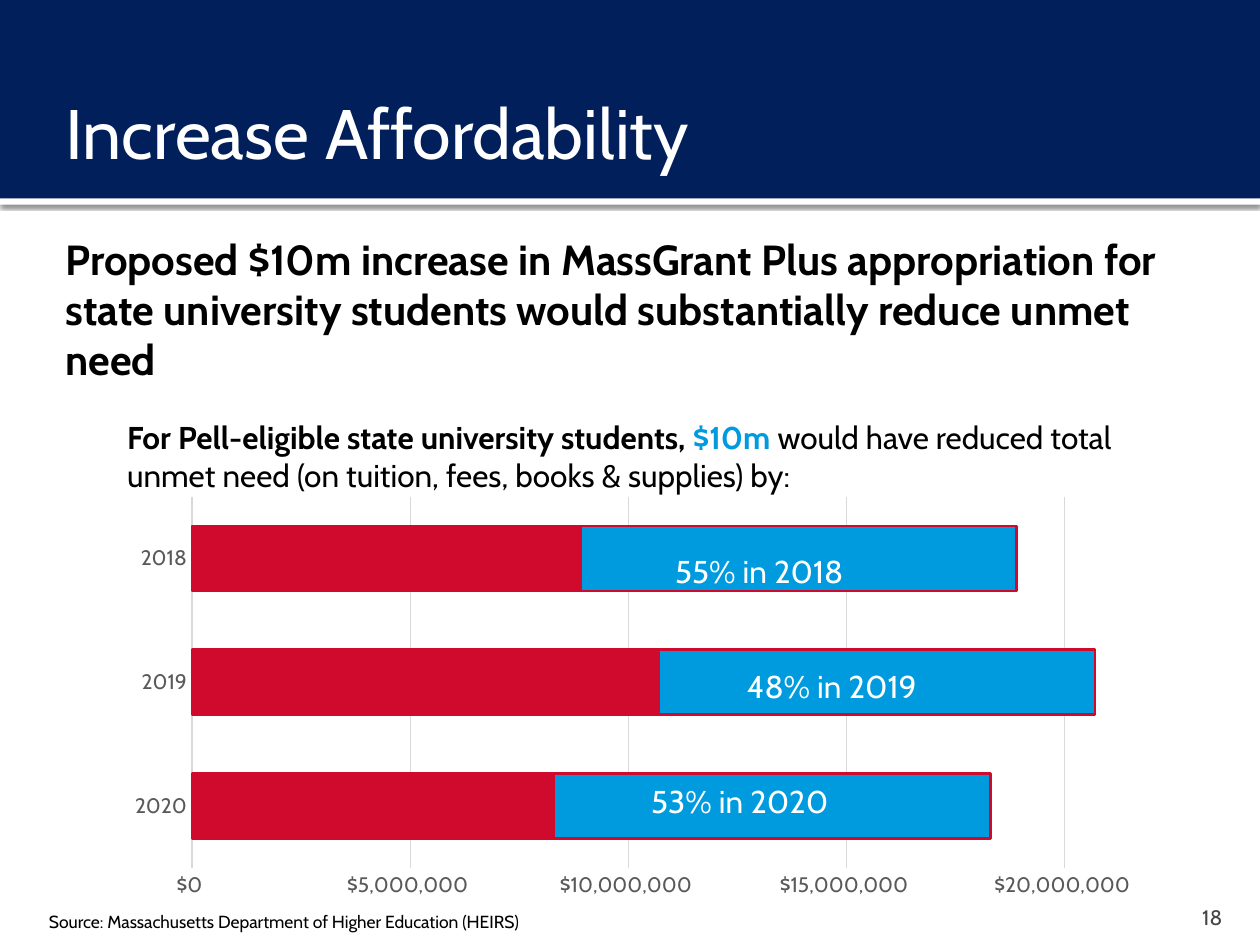
from lxml.etree import SubElement
from pptx import Presentation
from pptx.chart.data import CategoryChartData
from pptx.dml.color import RGBColor
from pptx.enum.chart import XL_CHART_TYPE, XL_TICK_MARK
from pptx.enum.shapes import MSO_SHAPE
from pptx.enum.text import MSO_ANCHOR, PP_ALIGN
from pptx.oxml import parse_xml
from pptx.oxml.ns import nsdecls, qn
from pptx.util import Inches, Pt

FONT = "Cabin"
NAVY, RED, BLUE = "001F5B", "CF0A2C", "009BDE"
WHITE, BLACK, GRAY, DARK_GRAY, GRID = "FFFFFF", "000000", "595959", "454545", "D9D9D9"
WIDTH, HEIGHT = 10, 7.5
BAND_HEIGHT = 0.21 * HEIGHT


def color(value):
    return RGBColor.from_string(value)


def set_font(font, size, value, bold=False):
    font.name = FONT
    font.size = Pt(size)
    font.bold = bold
    font.color.rgb = color(value)


def set_line(line, value, width):
    line.color.rgb = color(value)
    line.width = Pt(width)


def set_insets(frame, left, top, right, bottom):
    frame.margin_left, frame.margin_top = Inches(left), Inches(top)
    frame.margin_right, frame.margin_bottom = Inches(right), Inches(bottom)


def add_rectangle(slide, box, fill):
    shape = slide.shapes.add_shape(MSO_SHAPE.RECTANGLE, *map(Inches, box))
    shape.shadow.inherit = False
    shape.fill.solid()
    shape.fill.fore_color.rgb = color(fill)
    shape.line.fill.background()
    return shape


def add_text(slide, box, text, size, value, bold=False, indent=0):
    frame = slide.shapes.add_textbox(*map(Inches, box)).text_frame
    frame.word_wrap = True
    paragraph = frame.paragraphs[0]
    paragraph.text = text
    set_font(paragraph.font, size, value, bold)
    indent_paragraph(paragraph, indent)
    return frame


def indent_paragraph(paragraph, indent):
    properties = paragraph._p.get_or_add_pPr()
    properties.set("marL", str(Inches(indent)))
    properties.set("indent", "0")


def add_header(slide, box):
    left, top, width, height = box
    rule = add_rectangle(slide, (left, top + height, width, 0.05), WHITE)
    effects = rule._element.spPr.find(qn("a:effectLst"))
    effects.append(parse_xml(
        f'<a:outerShdw {nsdecls("a")} blurRad="{Pt(2.5)}" dist="{Pt(0.8)}" dir="5400000" '
        'algn="ctr" rotWithShape="0"><a:srgbClr val="000000"><a:alpha val="60000"/>'
        '</a:srgbClr></a:outerShdw>'))
    add_rectangle(slide, box, NAVY)
    title = slide.shapes.title
    title.element.getparent().append(title.element)
    title.left, title.top = Inches(left + 0.42), Inches(top + 0.58)
    title.width, title.height = Inches(width - 0.83), Inches(0.92)
    frame = title.text_frame
    frame.text = "Increase Affordability"
    frame.vertical_anchor = MSO_ANCHOR.MIDDLE
    set_insets(frame, 0.1, 0.05, 0.05, 0.05)
    frame.paragraphs[0].alignment = PP_ALIGN.LEFT
    set_font(frame.paragraphs[0].font, 40, WHITE)


def add_statement(slide, box):
    frame = add_text(
        slide, box,
        "Proposed $10m increase in MassGrant Plus appropriation for state university "
        "students would substantially reduce unmet need", 24, BLACK, True, 0.13)
    set_insets(frame, 0.06, 0.1, 0.1, 0.05)
    frame.paragraphs[0].space_before = Pt(12)
    frame.paragraphs[0].space_after = Pt(12)


def add_chart_heading(slide, box):
    paragraph = add_text(slide, box, "", 18, BLACK).paragraphs[0]
    for text, value, bold in (
            ("For Pell-eligible state university students, ", BLACK, True),
            ("$10m ", BLUE, True),
            ("would have reduced total unmet need (on tuition, fees, books & supplies) by:",
             BLACK, False)):
        run = paragraph.add_run()
        run.text = text
        set_font(run.font, 18, value, bold)


def set_plot_area(chart, **shares):
    plot_area = chart._chartSpace.chart.plotArea
    for layout in plot_area.findall(qn("c:layout")):
        plot_area.remove(layout)
    layout = parse_xml(f'<c:layout {nsdecls("c")}/>')
    plot_area.insert(0, layout)
    manual = SubElement(layout, qn("c:manualLayout"))
    settings = {"layoutTarget": "inner", "xMode": "edge", "yMode": "edge", **shares}
    for name, value in settings.items():
        SubElement(manual, qn(f"c:{name}")).set("val", str(value))


def add_need_chart(slide, box):
    data = CategoryChartData()
    data.categories = ["2020", "2019", "2018"]
    data.add_series("Series 1", (8300000, 10700000, 8900000))
    data.add_series("Series 2", (10000000,) * 3)
    chart = slide.shapes.add_chart(
        XL_CHART_TYPE.BAR_STACKED, *map(Inches, box), data).chart
    chart.has_legend = False
    chart.has_title = False
    set_font(chart.font, 10, BLACK)
    set_plot_area(chart, x=0.073, y=0.019, w=0.906, h=0.887)

    plot = chart.plots[0]
    plot.gap_width, plot.overlap = 90, 100
    plot.vary_by_categories = False
    for series, fill in zip(plot.series, (RED, BLUE)):
        series.format.fill.solid()
        series.format.fill.fore_color.rgb = color(fill)
        set_line(series.format.line, RED, 1.5)

    values = chart.value_axis
    for axis in (chart.category_axis, values):
        axis.major_tick_mark = axis.minor_tick_mark = XL_TICK_MARK.NONE
        set_font(axis.tick_labels.font, 12, GRAY)
    set_line(chart.category_axis.format.line, GRID, 0.75)
    values.minimum_scale, values.maximum_scale, values.major_unit = 0, 22000000, 5000000
    values.format.line.fill.background()
    values.has_major_gridlines = True
    set_line(values.major_gridlines.format.line, GRID, 0.75)
    values.tick_labels.number_format = '"$"#,##0_);[Red]\\("$"#,##0\\)'
    values.tick_labels.number_format_is_linked = False


def add_bar_labels(slide, box):
    frame = add_text(slide, box, "55% in 2018", 18, WHITE, indent=1)
    for text, indent in (("48% in 2019", 1.57), ("53% in 2020", 0.81)):
        paragraph = frame.add_paragraph()
        paragraph.text = text
        paragraph.space_before = Pt(33)
        set_font(paragraph.font, 18, WHITE)
        indent_paragraph(paragraph, indent)
    for paragraph in frame.paragraphs:
        paragraph.line_spacing = Pt(33)


def add_footer(slide, source_box, number_box):
    add_text(slide, source_box,
             "Source: Massachusetts Department of Higher Education (HEIRS)",
             10, BLACK, indent=0.13)
    number = add_text(slide, number_box, "18", 12, DARK_GRAY)
    number.vertical_anchor = MSO_ANCHOR.BOTTOM
    set_insets(number, 0.1, 0.05, 0.1, 0)
    number.paragraphs[0].alignment = PP_ALIGN.RIGHT


def main():
    presentation = Presentation()
    presentation.slide_width, presentation.slide_height = Inches(WIDTH), Inches(HEIGHT)
    slide = presentation.slides.add_slide(presentation.slide_layouts[5])
    add_header(slide, (0, 0, WIDTH, BAND_HEIGHT))
    add_statement(slide, (0.33, 1.75, 9.34, 1.08))
    add_need_chart(slide, (0.91, 3.88, 8.41, 3.32))
    add_bar_labels(slide, (4.26, 4.17, 3.98, 2.36))
    add_chart_heading(slide, (0.91, 3.27, 8.08, 0.71))
    add_footer(slide, (0.16, 7.18, 5.04, 0.27), (9, 7.08, 0.8, 0.3))
    presentation.save("out.pptx")


if __name__ == "__main__":
    main()
